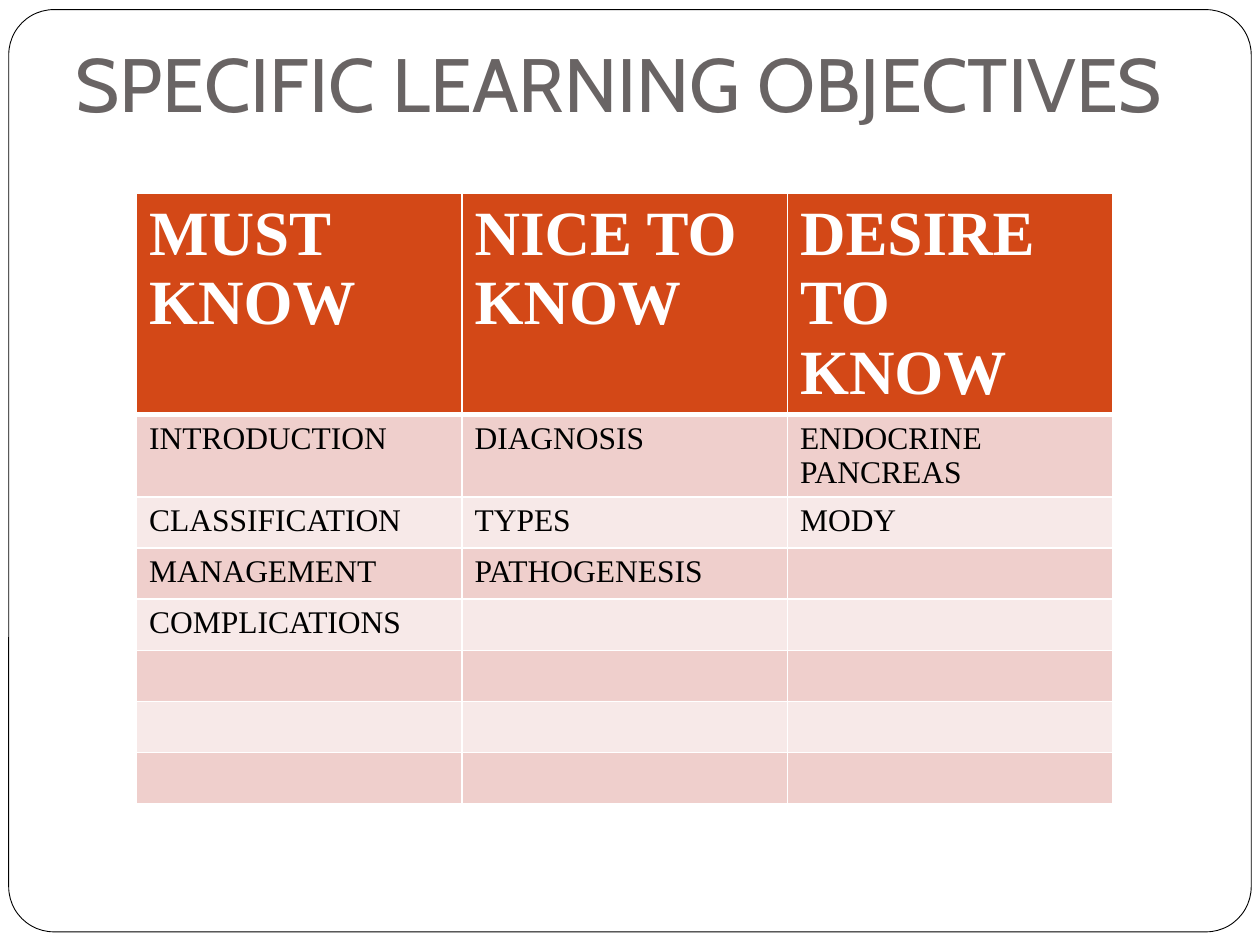
import pptx
import pptx.util
import pptx.dml.color
import pptx.enum.shapes
import pptx.enum.text
import pptx.oxml
import pptx.oxml.ns

Pt = pptx.util.Pt


def rgb(value):
    return pptx.dml.color.RGBColor.from_string(value)


def add_run(p, text, font, size, color, bold=False):
    r = p.add_run()
    r.text = text
    r.font.name = font
    r.font.size = Pt(size)
    r.font.bold = bold
    r.font.color.rgb = rgb(color)


prs = pptx.Presentation()
prs.slide_width, prs.slide_height = Pt(720), Pt(540)
s = prs.slides.add_slide(prs.slide_layouts[5])

# Rounded frame, behind the title
frame = s.shapes.add_shape(pptx.enum.shapes.MSO_SHAPE.ROUNDED_RECTANGLE,
                           Pt(5), Pt(5.5), Pt(710), Pt(527))
frame.adjustments[0] = 0.049
frame.shadow.inherit = False
frame.fill.solid()
frame.fill.fore_color.rgb = rgb("FFFFFF")
frame.line.color.rgb = rgb("000000")
frame.line.width = Pt(0.5)
s.shapes.title._element.addprevious(frame._element)

# Title
title = s.shapes.title
title.left, title.top, title.width, title.height = Pt(36), Pt(21.6), Pt(648), Pt(58.5)
tf = title.text_frame
tf.auto_size = pptx.enum.text.MSO_AUTO_SIZE.NONE
tf.word_wrap = True
tf.vertical_anchor = pptx.enum.text.MSO_ANCHOR.BOTTOM
tf.margin_left = tf.margin_right = tf.margin_bottom = Pt(7.2)
tf.margin_top = Pt(3.6)
p = tf.paragraphs[0]
p.alignment = pptx.enum.text.PP_ALIGN.LEFT
add_run(p, "SPECIFIC LEARNING OBJECTIVES", "Cabin", 43.2, "696464")

# Objectives table
rows = [
    ["MUST KNOW", "NICE TO KNOW", "DESIRE TO KNOW"],
    ["INTRODUCTION", "DIAGNOSIS", "ENDOCRINE PANCREAS"],
    ["CLASSIFICATION", "TYPES", "MODY"],
    ["MANAGEMENT", "PATHOGENESIS", ""],
    ["COMPLICATIONS", "", ""],
    ["", "", ""],
    ["", "", ""],
    ["", "", ""],
]
col_width, row_height = 186, 29.2
table = s.shapes.add_table(len(rows), 3, Pt(78), Pt(110.2),
                           Pt(3 * col_width), Pt(len(rows) * row_height)).table
for col in table.columns:
    col.width = Pt(col_width)

for i, texts in enumerate(rows):
    header = i == 0
    table.rows[i].height = Pt(row_height)
    fill = "D34817" if header else ("F7E9E8", "EFCFCC")[i % 2]
    for j, text in enumerate(texts):
        cell = table.cell(i, j)
        # White borders, thicker between the header and the body
        tcPr = cell._tc.get_or_add_tcPr()
        for side in "LRTB":
            thick = (header and side == "B") or (i == 1 and side == "T")
            tcPr.append(pptx.oxml.parse_xml(
                f'<a:ln{side} {pptx.oxml.ns.nsdecls("a")} w="{Pt(3 if thick else 1)}">'
                '<a:solidFill><a:srgbClr val="FFFFFF"/></a:solidFill>'
                f'</a:ln{side}>'))
        cell.fill.solid()
        cell.fill.fore_color.rgb = rgb(fill)
        if text:
            add_run(cell.text_frame.paragraphs[0], text, "Times New Roman",
                    36 if header else 18, "FFFFFF" if header else "000000", header)

prs.save("out.pptx")
